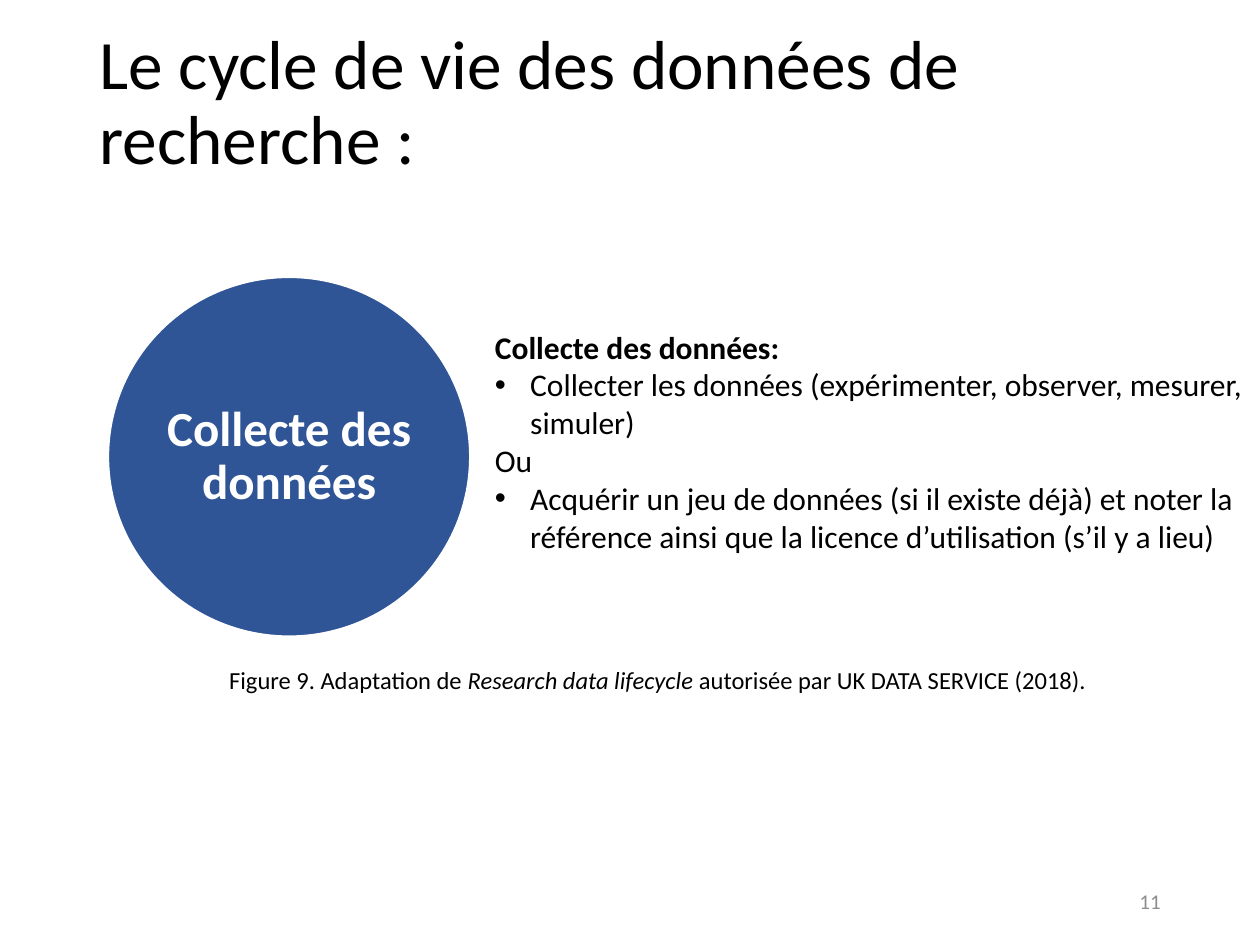
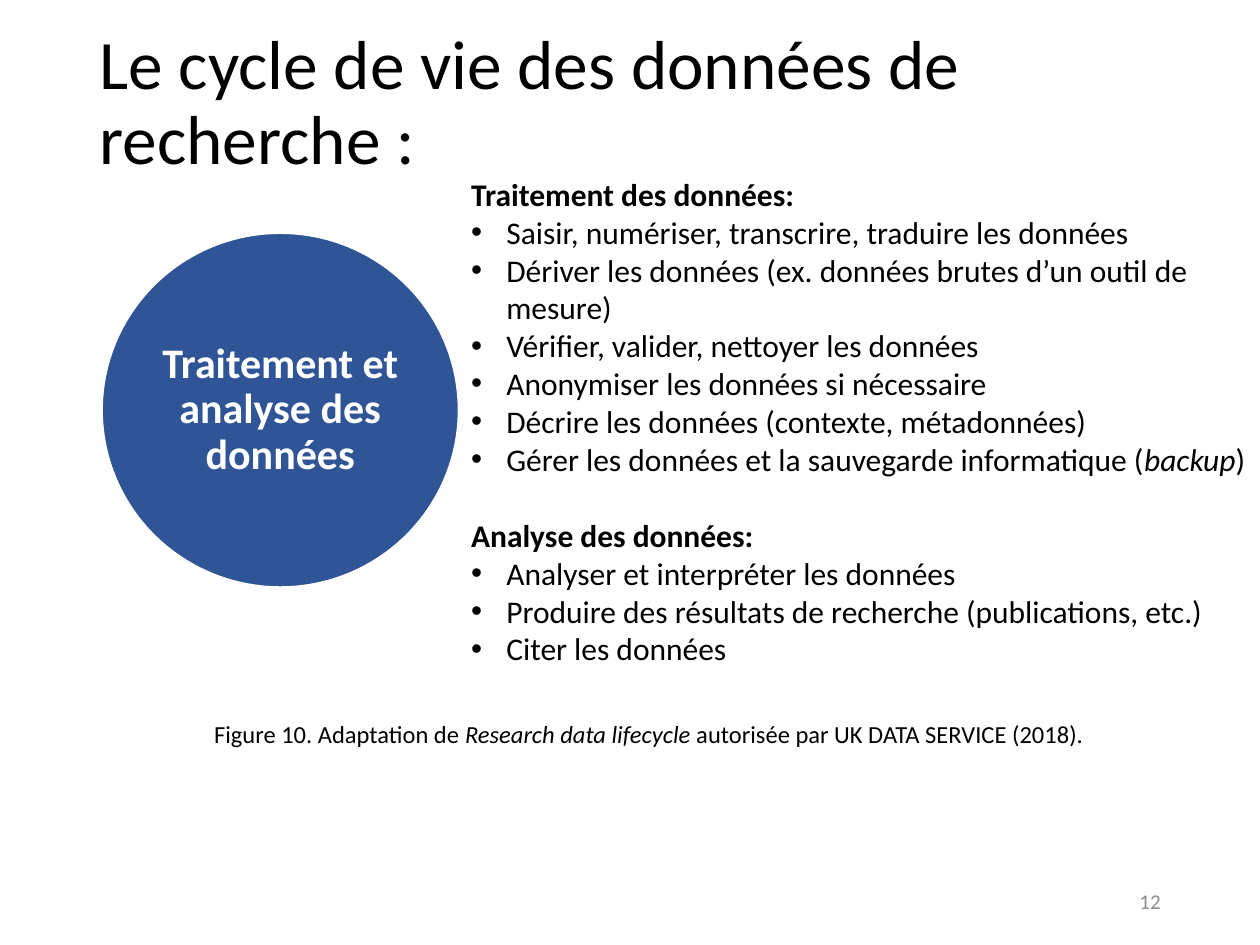
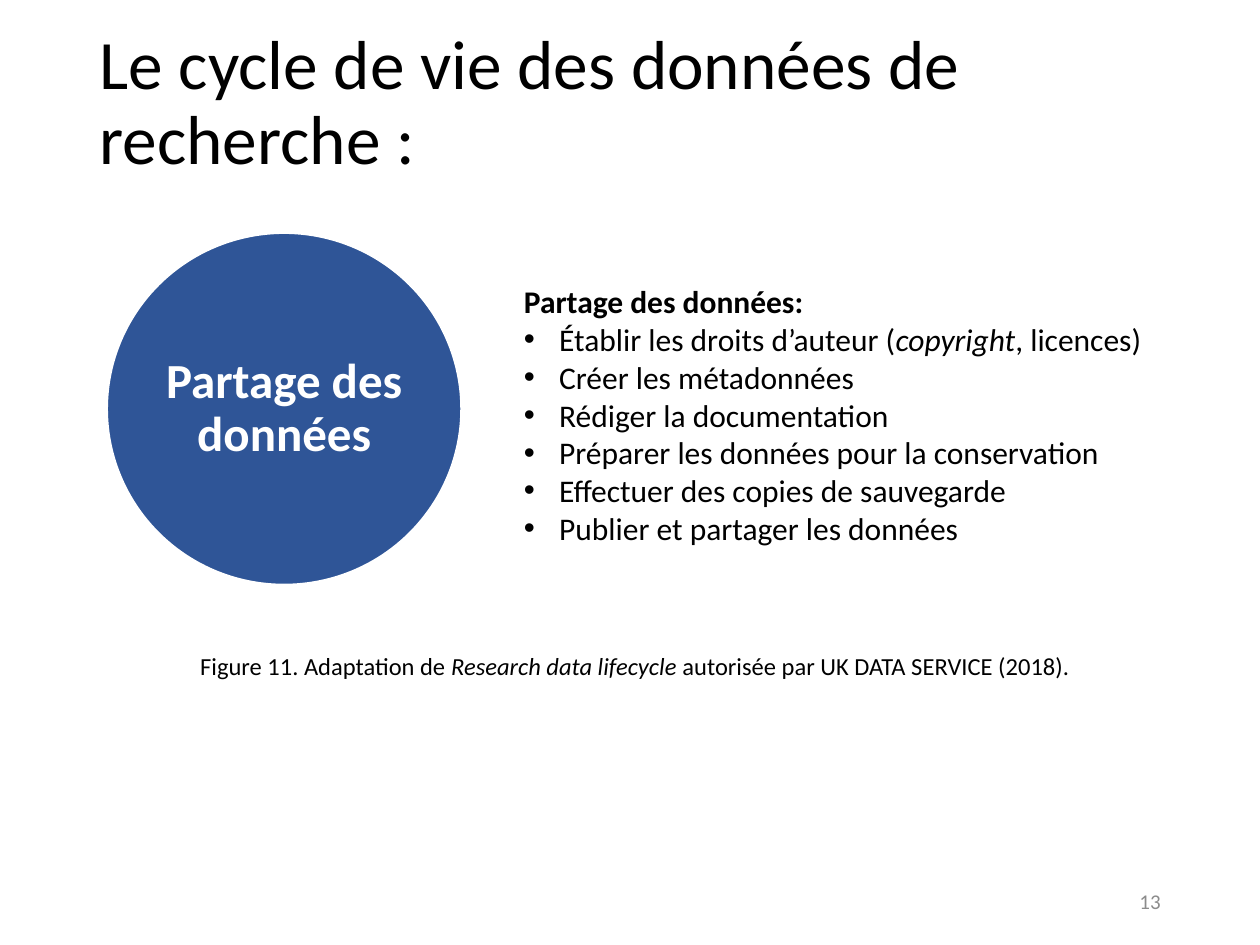
from dataclasses import dataclass

from lxml.etree import SubElement
from pptx import Presentation
from pptx.dml.color import RGBColor
from pptx.enum.shapes import MSO_SHAPE
from pptx.enum.text import MSO_ANCHOR, MSO_AUTO_SIZE, PP_ALIGN
from pptx.oxml.ns import qn
from pptx.util import Inches, Pt

TITLE = "Le cycle de vie des données de recherche :"
FIRST_PAGE = 11
FIRST_FIGURE = 9
CAPTION = ("Figure {}. Adaptation de ", "Research data lifecycle",
           " autorisée par UK DATA SERVICE (2018).")

# Each section is (heading, entries). An entry is a bullet, given as text or as
# alternating plain and italic spans; a Plain entry has no bullet.
class Plain(str):
    """A line of body text without a bullet."""


STAGES = [
    {
        "label": "Collecte des données", "label_size": 28,
        "circle": (0.86, 2.2, 2.87, 2.85),
        "body": (3.83, 2.55, 6.17, 1.92),
        "caption": (1.72, 5.23, 7.06, 0.34),
        "sections": [
            ("Collecte des données:", [
                "Collecter les données (expérimenter, observer, mesurer, simuler)",
                Plain("Ou"),
                "Acquérir un jeu de données (si il existe déjà) et noter la "
                "référence ainsi que la licence d’utilisation (s’il y a lieu)",
            ]),
        ],
    },
    {
        "label": "Traitement et analyse des données", "label_size": 24,
        "circle": (0.81, 1.85, 2.83, 2.81),
        "body": (3.64, 1.34, 6.39, 4.04),
        "caption": (1.6, 5.66, 7.35, 0.34),
        "sections": [
            ("Traitement des données:", [
                "Saisir, numériser, transcrire, traduire les données",
                "Dériver les données (ex. données brutes d’un outil de mesure)",
                "Vérifier, valider, nettoyer les données",
                "Anonymiser les données si nécessaire",
                "Décrire les données (contexte, métadonnées)",
                ("Gérer les données et la sauvegarde informatique (", "backup", ")"),
            ]),
            ("Analyse des données:", [
                "Analyser et interpréter les données",
                "Produire des résultats de recherche (publications, etc.)",
                "Citer les données",
            ]),
        ],
    },
    {
        "label": "Partage des données", "label_size": 28,
        "circle": (0.85, 1.85, 2.81, 2.79),
        "body": (4.06, 2.19, 5.74, 2.22),
        "caption": (1.49, 5.12, 7.35, 0.34),
        "sections": [
            ("Partage des données:", [
                ("Établir les droits d’auteur (", "copyright", ", licences)"),
                "Créer les métadonnées",
                "Rédiger la documentation",
                "Préparer les données pour la conservation",
                "Effectuer des copies de sauvegarde",
                "Publier et partager les données",
            ]),
        ],
    },
]


@dataclass(frozen=True)
class Theme:
    font: str = "Calibri"
    ink: str = "000000"
    paper: str = "FFFFFF"
    accent: str = "2F5597"
    muted: str = "8C8C8C"
    title_size: float = 39.6
    body_size: float = 18
    caption_size: float = 14
    number_size: float = 12
    section_gap: float = 22
    line_spacing: float = 0.9
    indent: float = 0.28
    label_inset: float = 0.04


THEME = Theme()
TITLE_AREA = (0.69, 0.4, 8.62, 1.45)
TITLE_BOTTOM_INSET = 0.64
NUMBER_AREA = (7.06, 6.95, 2.25, 0.4)


def color(code):
    return RGBColor.from_string(code)


def add_span(para, text, size, code=THEME.ink, bold=False, italic=False):
    span = para.add_run()
    span.text = text
    font = span.font
    font.name, font.size = THEME.font, Pt(size)
    font.bold, font.italic = bold, italic
    font.color.rgb = color(code)


def add_spans(para, parts, size):
    """Write alternating plain and italic spans."""
    for index, text in enumerate(parts):
        add_span(para, text, size, italic=index % 2 == 1)


def add_box(page, area, anchor=MSO_ANCHOR.TOP, grow=False):
    box = page.shapes.add_textbox(*map(Inches, area))
    frame = box.text_frame
    frame.word_wrap = True
    frame.vertical_anchor = anchor
    if grow:
        frame.auto_size = MSO_AUTO_SIZE.SHAPE_TO_FIT_TEXT
    return frame


def add_bullet(para):
    properties = para._p.get_or_add_pPr()
    properties.set("marL", str(Inches(THEME.indent)))
    properties.set("indent", str(-Inches(THEME.indent)))
    SubElement(properties, qn("a:buFont")).set("typeface", "Arial")
    SubElement(properties, qn("a:buChar")).set("char", "•")


def set_title(page):
    title = page.shapes.title
    title.left, title.top, title.width, title.height = map(Inches, TITLE_AREA)
    frame = title.text_frame
    frame.auto_size = MSO_AUTO_SIZE.NONE
    frame.word_wrap = True
    frame.vertical_anchor = MSO_ANCHOR.MIDDLE
    frame.margin_bottom = Inches(TITLE_BOTTOM_INSET)
    para = frame.paragraphs[0]
    para.alignment = PP_ALIGN.LEFT
    para.line_spacing = THEME.line_spacing
    add_span(para, TITLE, THEME.title_size)


def add_circle(page, area, label, size):
    circle = page.shapes.add_shape(MSO_SHAPE.OVAL, *map(Inches, area))
    circle.shadow.inherit = False
    circle.fill.solid()
    circle.fill.fore_color.rgb = color(THEME.accent)
    circle.line.color.rgb = color(THEME.paper)
    circle.line.width = Pt(1)
    frame = circle.text_frame
    frame.word_wrap = True
    frame.vertical_anchor = MSO_ANCHOR.MIDDLE
    frame.margin_left = frame.margin_right = Inches(THEME.label_inset)
    frame.margin_top = frame.margin_bottom = Inches(THEME.label_inset)
    para = frame.paragraphs[0]
    para.alignment = PP_ALIGN.CENTER
    para.line_spacing = THEME.line_spacing
    add_span(para, label, size, THEME.paper, bold=True)


def add_body(page, area, sections):
    frame = add_box(page, area, grow=True)
    for index, (heading, entries) in enumerate(sections):
        para = frame.add_paragraph() if index else frame.paragraphs[0]
        if index:
            para.space_before = Pt(THEME.section_gap)
        add_span(para, heading, THEME.body_size, bold=True)
        for entry in entries:
            para = frame.add_paragraph()
            if not isinstance(entry, Plain):
                add_bullet(para)
            parts = entry if isinstance(entry, tuple) else (entry,)
            add_spans(para, parts, THEME.body_size)


def add_caption(page, area, figure):
    para = add_box(page, area, grow=True).paragraphs[0]
    parts = (CAPTION[0].format(figure), *CAPTION[1:])
    add_spans(para, parts, THEME.caption_size)


def add_page_number(page, number):
    para = add_box(page, NUMBER_AREA, MSO_ANCHOR.MIDDLE).paragraphs[0]
    para.alignment = PP_ALIGN.RIGHT
    add_span(para, str(number), THEME.number_size, THEME.muted)


def main():
    deck = Presentation()
    deck.slide_width, deck.slide_height = Inches(10), Inches(7.5)
    title_only = deck.slide_layouts.get_by_name("Title Only")
    for index, stage in enumerate(STAGES):
        page = deck.slides.add_slide(title_only)
        set_title(page)
        add_circle(page, stage["circle"], stage["label"], stage["label_size"])
        add_body(page, stage["body"], stage["sections"])
        add_page_number(page, FIRST_PAGE + index)
        add_caption(page, stage["caption"], FIRST_FIGURE + index)
    deck.save("out.pptx")


if __name__ == "__main__":
    main()
